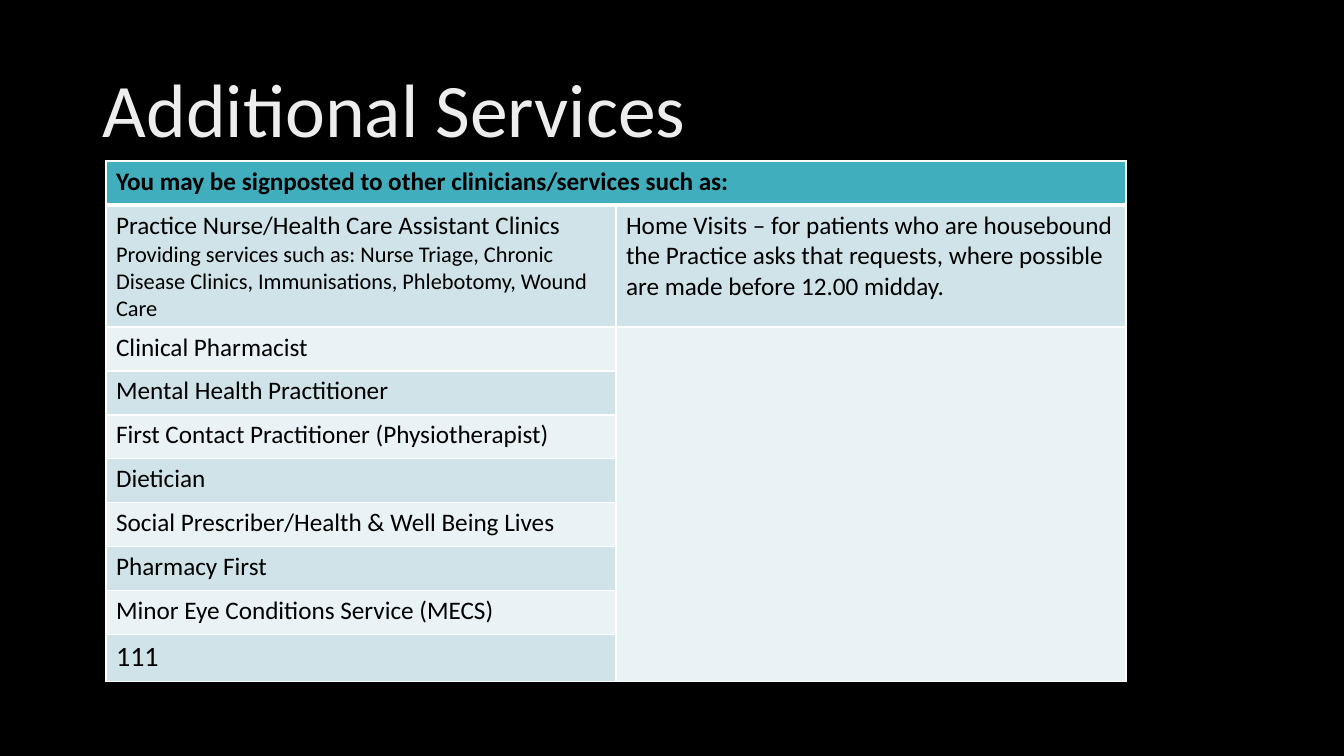
from pptx import Presentation
from pptx.dml.color import RGBColor
from pptx.enum.text import MSO_ANCHOR
from pptx.oxml import parse_xml
from pptx.oxml.ns import nsdecls
from pptx.util import Emu, Pt

COLORS = {
    "background": "000000", "title": "EDEDED", "text": "000000", "border": "FFFFFF",
    "header": "41AEBD", "dark_band": "CFE3E8", "light_band": "E9F2F4",
}
HEADER = "You may be signposted to other clinicians/services such as:"
NURSE = "Practice Nurse/Health Care Assistant Clinics"
NURSE_DETAIL = ("Providing services such as: Nurse Triage, Chronic Disease Clinics, "
                "Immunisations, Phlebotomy, Wound Care")
HOME_VISITS = ("Home Visits – for patients who are housebound the Practice asks that "
               "requests, where possible are made before 12.00 midday.")
SERVICES = [
    "Clinical Pharmacist", "Mental Health Practitioner",
    "First Contact Practitioner (Physiotherapist)", "Dietician",
    "Social Prescriber/Health & Well Being Lives", "Pharmacy First",
    "Minor Eye Conditions Service (MECS)", "111",
]
ROW_HEIGHTS = [44, 122] + [44] * 7 + [47]


def px(n):
    return Emu(round(n * 12192000 / 1344))


def rgb(name):
    return RGBColor.from_string(COLORS[name])


def write(p, text, size=18, color="text", bold=False):
    r = p.add_run()
    r.text = text
    r.font.name = "Calibri"
    r.font.size = Pt(size)
    r.font.bold = bold
    r.font.color.rgb = rgb(color)


def add_title(s, x, y, w, h):
    tf = s.shapes.add_textbox(px(x), px(y), px(w), px(h)).text_frame
    tf.word_wrap = True
    tf.vertical_anchor = MSO_ANCHOR.MIDDLE
    p = tf.paragraphs[0]
    p.line_spacing = 0.9
    write(p, "Additional Services", size=54, color="title")


def style_cell(cell, row):
    """Give a cell its white borders and the fill of its row."""
    widths = {"L": 1, "R": 1, "T": 3 if row == 1 else 1, "B": 3 if row == 0 else 1}
    tcPr = cell._tc.get_or_add_tcPr()
    for side, width in widths.items():
        tcPr.append(parse_xml(
            f'<a:ln{side} {nsdecls("a")} w="{Pt(width)}"><a:solidFill>'
            f'<a:srgbClr val="{COLORS["border"]}"/></a:solidFill></a:ln{side}>'))
    band = "header" if row == 0 else "dark_band" if row % 2 else "light_band"
    cell.fill.solid()
    cell.fill.fore_color.rgb = rgb(band)


def add_services_table(s, x, y, w):
    rows = len(ROW_HEIGHTS)
    table = s.shapes.add_table(rows, 2, px(x), px(y), px(w), px(sum(ROW_HEIGHTS))).table
    table.first_row = table.horz_banding = False
    for column in table.columns:
        column.width = px(w // 2)
    for i, height in enumerate(ROW_HEIGHTS):
        table.rows[i].height = px(height)
        for j in range(2):
            style_cell(table.cell(i, j), i)
    table.cell(0, 0).merge(table.cell(0, 1))
    table.cell(2, 1).merge(table.cell(rows - 1, 1))

    write(table.cell(0, 0).text_frame.paragraphs[0], HEADER, bold=True)
    tf = table.cell(1, 0).text_frame
    write(tf.paragraphs[0], NURSE)
    write(tf.add_paragraph(), NURSE_DETAIL, size=16)
    write(table.cell(1, 1).text_frame.paragraphs[0], HOME_VISITS)
    for i, service in enumerate(SERVICES, start=2):
        size = 20 if service == "111" else 18
        write(table.cell(i, 0).text_frame.paragraphs[0], service, size=size)


def main():
    prs = Presentation()
    prs.slide_width, prs.slide_height = px(1344), px(756)
    s = prs.slides.add_slide(prs.slide_layouts[6])
    s.background.fill.solid()
    s.background.fill.fore_color.rgb = rgb("background")
    add_title(s, 93, 40, 1159, 146)
    add_services_table(s, 106, 161, 1020)
    prs.save("out.pptx")


if __name__ == "__main__":
    main()
